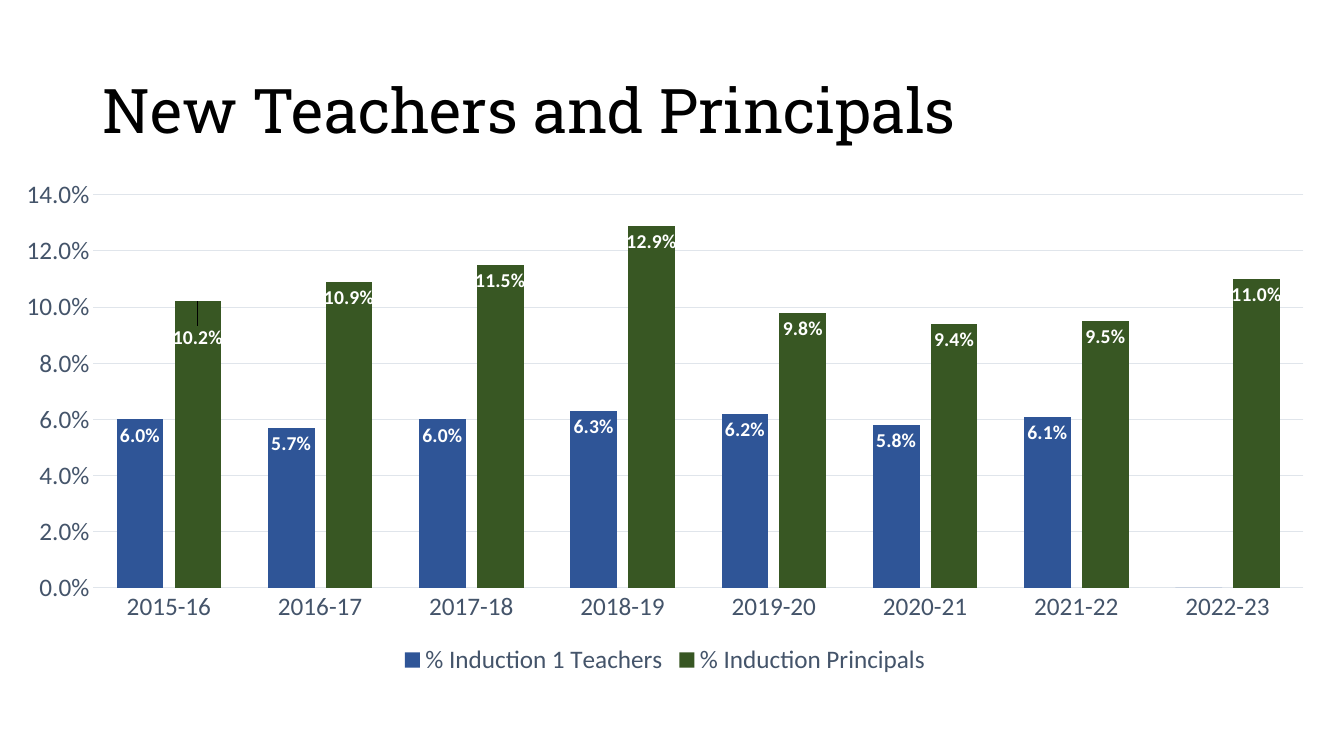
import pptx
import pptx.chart.data
import pptx.dml.color
import pptx.enum.chart
import pptx.enum.text
import pptx.oxml
import pptx.oxml.ns
import pptx.util
from pptx.util import Inches

# Content
TITLE = "New Teachers and Principals"
YEARS = ["2015-16", "2016-17", "2017-18", "2018-19",
         "2019-20", "2020-21", "2021-22", "2022-23"]
SHARES = {
    "% Induction 1 Teachers": [0.06, 0.057, 0.06, 0.063, 0.062, 0.058, 0.061, 0],
    "% Induction Principals": [0.102, 0.109, 0.115, 0.129, 0.098, 0.094, 0.095, 0.11],
}
PERCENT = "0.0%"
LOWERED_LABEL_SHIFT = 0.04  # share of the chart height

THEME = {
    "title": "000000", "axis": "44546A", "grid": "E0E5EB", "label": "FFFFFF",
    "bars": ["2F5597", "385723"],
    "title_font": "Roboto Slab", "chart_font": "Calibri",
    "title_size": 44, "axis_size": 18, "label_size": 14,
}


def rgb(name):
    return pptx.dml.color.RGBColor.from_string(name)


def style_font(font, face, size, color, bold=False):
    font.name = face
    font.size = pptx.util.Pt(size)
    font.color.rgb = rgb(color)
    font.bold = bold


def style_axis_text(font):
    style_font(font, THEME["chart_font"], THEME["axis_size"], THEME["axis"])


def style_label_text(font):
    style_font(font, THEME["chart_font"], THEME["label_size"], THEME["label"], True)


def style_grid_line(line):
    line.color.rgb = rgb(THEME["grid"])
    line.width = pptx.util.Pt(0.75)


def chart_xml(tag, inner="", attributes=""):
    namespace = pptx.oxml.ns.nsdecls("c")
    return pptx.oxml.parse_xml(f"<c:{tag} {namespace} {attributes}>{inner}</c:{tag}>")


presentation = pptx.Presentation()
presentation.slide_width, presentation.slide_height = Inches(13.33), Inches(7.5)
slide = presentation.slides.add_slide(presentation.slide_layouts[5])

# Title
title = slide.shapes.title
title.left, title.top = Inches(0.92), Inches(0.4)
title.width, title.height = Inches(11.5), Inches(1.45)
title.text_frame.text = TITLE
title.text_frame.vertical_anchor = pptx.enum.text.MSO_ANCHOR.MIDDLE
heading = title.text_frame.paragraphs[0]
heading.alignment = pptx.enum.text.PP_ALIGN.LEFT
heading.line_spacing = 0.9
style_font(heading.font, THEME["title_font"], THEME["title_size"], THEME["title"])

# Chart
shares_data = pptx.chart.data.CategoryChartData(number_format=PERCENT)
shares_data.categories = YEARS
for name, shares in SHARES.items():
    shares_data.add_series(name, shares)
chart = slide.shapes.add_chart(
    pptx.enum.chart.XL_CHART_TYPE.COLUMN_CLUSTERED,
    Inches(0), Inches(1.68), Inches(13.19), Inches(5.07), shares_data).chart
chart.has_title = False
style_font(chart.font, THEME["chart_font"], 10, THEME["title"])

# Axes and legend
years_axis, share_axis = chart.category_axis, chart.value_axis
for axis in (years_axis, share_axis):
    axis.major_tick_mark = pptx.enum.chart.XL_TICK_MARK.NONE
    axis.minor_tick_mark = pptx.enum.chart.XL_TICK_MARK.NONE
    style_axis_text(axis.tick_labels.font)
style_grid_line(years_axis.format.line)
style_grid_line(share_axis.major_gridlines.format.line)
share_axis.format.line.fill.background()
share_axis.minimum_scale, share_axis.maximum_scale = 0, 0.14
share_axis.major_unit = 0.02
share_axis.tick_labels.number_format = PERCENT
share_axis.tick_labels.number_format_is_linked = False
chart.has_legend = True
chart.legend.position = pptx.enum.chart.XL_LEGEND_POSITION.BOTTOM
chart.legend.include_in_layout = False
style_axis_text(chart.legend.font)

# Bars and their labels
bars = chart.plots[0]
bars.gap_width, bars.overlap = 100, -24
bars.vary_by_categories = False
inside_end = pptx.enum.chart.XL_LABEL_POSITION.INSIDE_END
for series, color in zip(bars.series, THEME["bars"]):
    series.format.fill.solid()
    series.format.fill.fore_color.rgb = rgb(color)
    labels = series.data_labels
    labels.show_value = True
    labels.position = inside_end
    labels.number_format = PERCENT
    labels.number_format_is_linked = False
    style_label_text(labels.font)

teachers, principals = bars.series

# The year without teacher data has no label
teachers.data_labels._element.insert(
    0, chart_xml("dLbl", f'<c:idx val="{len(YEARS) - 1}"/><c:delete val="1"/>'))

# The first principals label sits lower in its bar
first_label = principals.points[0].data_label
style_label_text(first_label.font)
first_label.position = inside_end
first_label_xml = principals.data_labels._element.find(pptx.oxml.ns.qn("c:dLbl"))
first_label_xml.insert(1, chart_xml(
    "layout", f'<c:manualLayout><c:x val="0"/><c:y val="{LOWERED_LABEL_SHIFT}"/></c:manualLayout>'))
first_label_xml.insert(2, chart_xml(
    "numFmt", attributes=f'formatCode="{PERCENT}" sourceLinked="0"'))

presentation.save("out.pptx")
